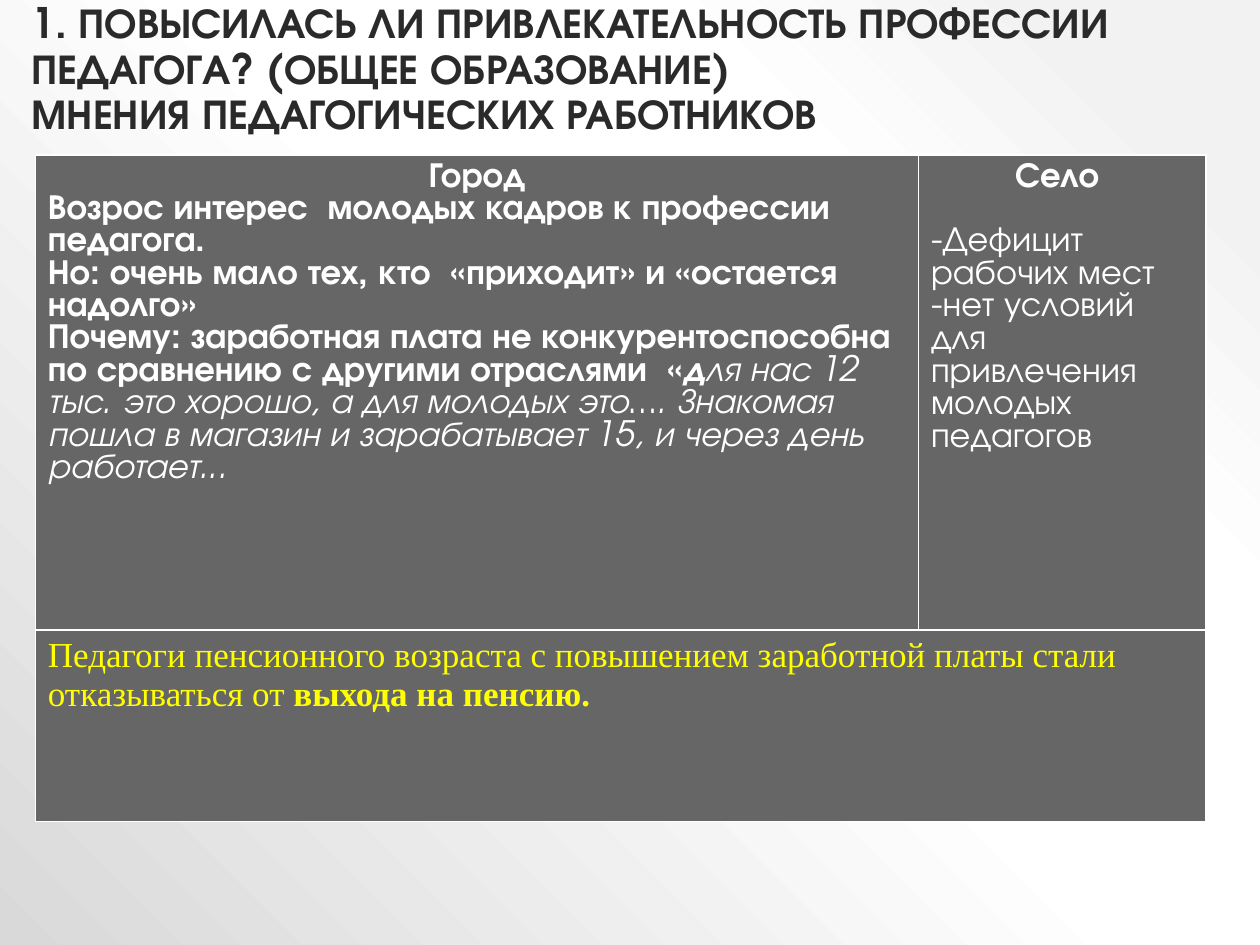
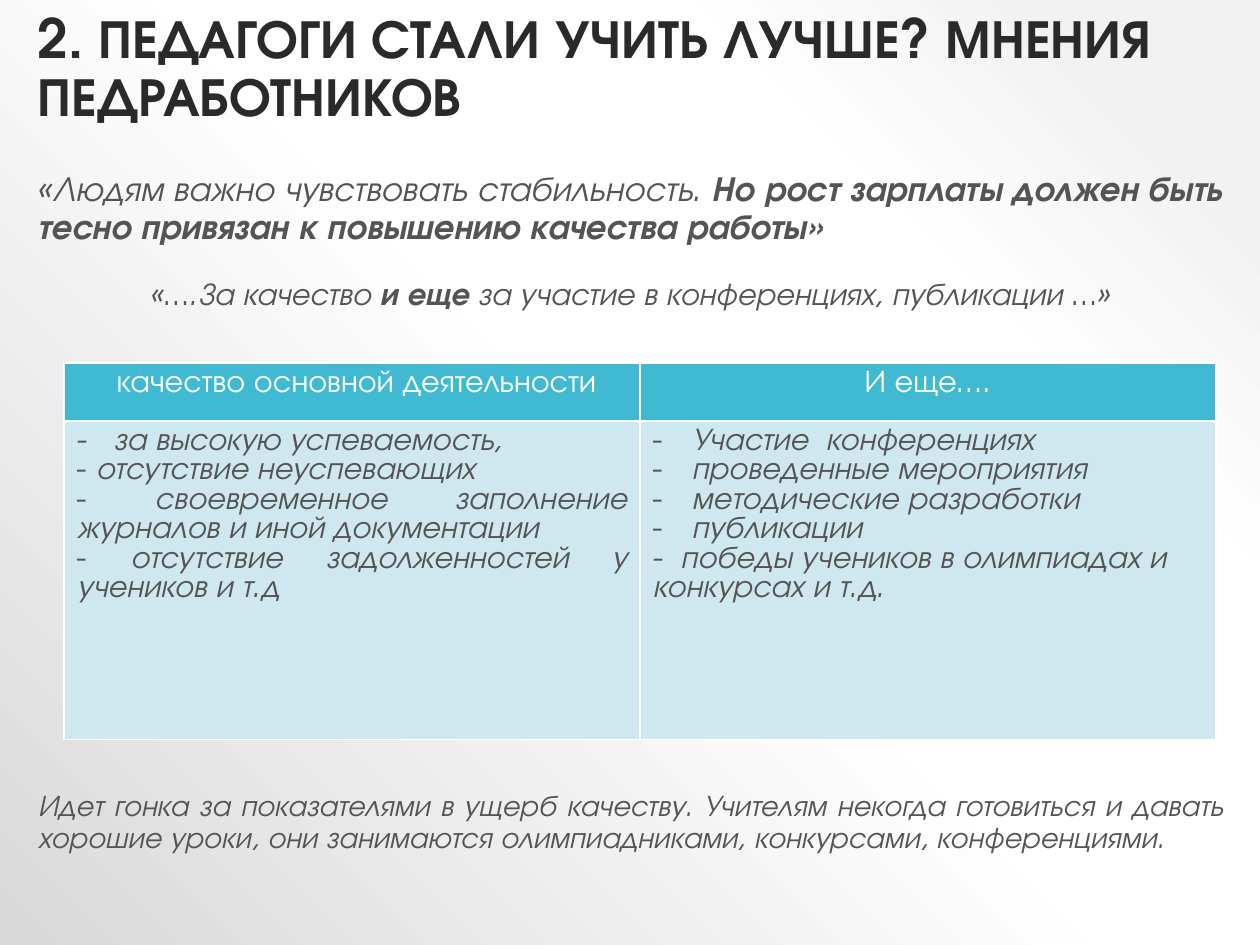
from lxml import etree
from pptx import Presentation
from pptx.dml.color import RGBColor
from pptx.enum.text import MSO_ANCHOR, MSO_AUTO_SIZE, PP_ALIGN
from pptx.oxml import parse_xml
from pptx.oxml.ns import nsdecls, qn
from pptx.util import Inches, Pt

FONT = "TeX Gyre Adventor"
SERIF = "Times New Roman"
DARK = RGBColor(0x2A, 0x2A, 0x2A)
GREY = RGBColor(0x54, 0x54, 0x54)
WHITE = RGBColor(0xFF, 0xFF, 0xFF)
YELLOW = RGBColor(0xFF, 0xFF, 0x00)
CELL_GREY = RGBColor(0x66, 0x66, 0x66)
TEAL = RGBColor(0x40, 0xBA, 0xD2)
PALE_TEAL = RGBColor(0xCF, 0xE7, 0xEE)
LEFT, CENTER, JUSTIFY = PP_ALIGN.LEFT, PP_ALIGN.CENTER, PP_ALIGN.JUSTIFY


def write(frame, lines, size, color, font=FONT, spacing=0.9):
    for index, (align, before, indent, bullet, spans) in enumerate(lines):
        para = frame.paragraphs[0] if index == 0 else frame.add_paragraph()
        para.alignment = align
        para.line_spacing = spacing
        para.space_before = Pt(before)
        props = para._p.get_or_add_pPr()
        props.set("marL", str(Inches(indent)))
        props.set("indent", str(-Inches(indent)))
        if bullet:
            etree.SubElement(props, qn("a:buFont")).set("typeface", font)
            etree.SubElement(props, qn("a:buChar")).set("char", "-")
        else:
            etree.SubElement(props, qn("a:buNone"))
        for words, style, *own_size in spans:
            for part_index, part in enumerate(words.split("\n")):
                if part_index:
                    para.add_line_break()
                span = para.add_run()
                span.text = part
                span.font.name = font
                span.font.size = Pt(own_size[0] if own_size else size)
                span.font.bold = "b" in style
                span.font.italic = "i" in style
                span.font.color.rgb = color


def place(box, left, top, width, height, anchor):
    box.left, box.top = Inches(left), Inches(top)
    box.width, box.height = Inches(width), Inches(height)
    box.text_frame.auto_size = MSO_AUTO_SIZE.NONE
    box.text_frame.word_wrap = True
    box.text_frame.vertical_anchor = anchor


deck = Presentation()
deck.slide_width, deck.slide_height = Inches(10), Inches(7.5)

master = deck.slide_master
master.background.fill.gradient()
gradient = next(master._element.iter(qn("a:gradFill")))
stops = "".join(
    f'<a:gs pos="{position * 1000}"><a:srgbClr val="{shade}"/></a:gs>'
    for position, shade in [(10, "F2F2F2"), (28, "FFFFFF"), (48, "FFFFFF"), (100, "D9D9D9")]
)
gradient.getparent().replace(gradient, parse_xml(
    f'<a:gradFill {nsdecls("a")} rotWithShape="1"><a:gsLst>{stops}</a:gsLst>'
    '<a:path path="circle"><a:fillToRect l="100000" b="100000"/></a:path></a:gradFill>'
))

pages = []
for layout, heading, size, area in [
    (5, "1. ПОВЫСИЛАСЬ ЛИ ПРИВЛЕКАТЕЛЬНОСТЬ ПРОФЕССИИ ПЕДАГОГА? (ОБЩЕЕ ОБРАЗОВАНИЕ)\n"
        "МНЕНИЯ ПЕДАГОГИЧЕСКИХ РАБОТНИКОВ", 24, (0.15, 0, 9.88, 1.15)),
    (1, "2. ПЕДАГОГИ СТАЛИ УЧИТЬ ЛУЧШЕ? МНЕНИЯ ПЕДРАБОТНИКОВ", 31, (0.2, 0.02, 9.61, 1.05)),
]:
    page = deck.slides.add_slide(deck.slide_layouts[layout])
    place(page.shapes.title, *area, MSO_ANCHOR.BOTTOM)
    write(page.shapes.title.text_frame, [(LEFT, 0, 0, False, [(heading, "b")])], size, DARK)
    pages.append(page)
attraction, quality = pages

body = quality.placeholders[1]
place(body, 0.2, 1.31, 9.61, 5.98, MSO_ANCHOR.TOP)
write(body.text_frame, [
    (LEFT, 18, 0, False, [
        ("«Людям важно чувствовать стабильность. ", "i", 20),
        ("Но рост зарплаты должен быть тесно привязан к повышению качества работы»", "bi", 20)]),
    (CENTER, 18, 0, False, [
        ("«….За качество ", "i"), ("и еще ", "bi"),
        ("за участие в конференциях, публикации …»", "i")]),
    (JUSTIFY, 273.5, 0, False, [
        ("Идет гонка за показателями в ущерб качеству. Учителям некогда готовиться и давать "
         "хорошие уроки, они занимаются олимпиадниками, конкурсами, конференциями.", "i", 17)]),
], 18, GREY)

city = [
    (CENTER, 0, 0, False, [("Город", "b")]),
    (LEFT, 0, 0, False, [("Возрос интерес  молодых кадров к профессии педагога.", "b")]),
    (LEFT, 0, 0, False, [("Но: очень мало тех, кто  «приходит» и «остается надолго»", "b")]),
    (LEFT, 0, 0, False, [
        ("Почему: заработная плата не конкурентоспособна по сравнению с другими отраслями  «", "b"),
        ("д", "bi"),
        ("ля нас 12 тыс. это хорошо, а для молодых это…. Знакомая пошла в магазин "
         "и зарабатывает 15, и через день работает...", "i")]),
]
village = [
    (CENTER, 0, 0, False, [("Село ", "b")]),
    (LEFT, 18.5, 0, True, [("Дефицит рабочих мест", "")]),
    (LEFT, 0, 0, True, [("нет условий для привлечения молодых педагогов", "")]),
]
pension = [(LEFT, 0, 0, False, [
    ("Педагоги пенсионного возраста с повышением заработной платы стали отказываться от ", ""),
    ("выхода на пенсию.", "b")])]
main_work = [(JUSTIFY, 0, 0, False, [("-   за высокую успеваемость, ", "i")])] + [
    (JUSTIFY, 0, 0, True, [(item, "i")]) for item in (
        " отсутствие неуспевающих",
        " своевременное заполнение журналов и иной документации",
        " отсутствие задолженностей у учеников и т.д")
]
extra_work = [
    (JUSTIFY, 0, 0.31, True, [(item, "i")]) for item in (
        "Участие  конференциях", "проведенные мероприятия", "методические разработки", "публикации")
] + [(LEFT, 0, 0, False, [("-  победы учеников в олимпиадах и конкурсах и т.д.", "i")])]
headers = [[(CENTER, 0, 0, False, [(label, "")])]
           for label in (" качество основной деятельности", "И еще….")]

for page, left, top, widths, heights, size, rows in [
    (attraction, 0.28, 1.23, (7.01, 2.28), (3.77, 1.52), 20, [
        (CELL_GREY, WHITE, FONT, [city, village]),
        (CELL_GREY, YELLOW, SERIF, [pension])]),
    (quality, 0.51, 2.88, (4.57, 4.57), (0.46, 2.53), 18, [
        (TEAL, WHITE, FONT, headers),
        (PALE_TEAL, GREY, FONT, [main_work, extra_work])]),
]:
    table = page.shapes.add_table(
        2, 2, Inches(left), Inches(top), Inches(sum(widths)), Inches(sum(heights))).table
    for column, width in zip(table.columns, widths):
        column.width = Inches(width)
    for row_index, (fill, color, font, contents) in enumerate(rows):
        table.rows[row_index].height = Inches(heights[row_index])
        if len(contents) == 1:
            table.cell(row_index, 0).merge(table.cell(row_index, 1))
        for column_index, lines in enumerate(contents):
            cell = table.cell(row_index, column_index)
            cell.fill.solid()
            cell.fill.fore_color.rgb = fill
            write(cell.text_frame, lines, size, color, font, 1.0)

deck.save("out.pptx")
